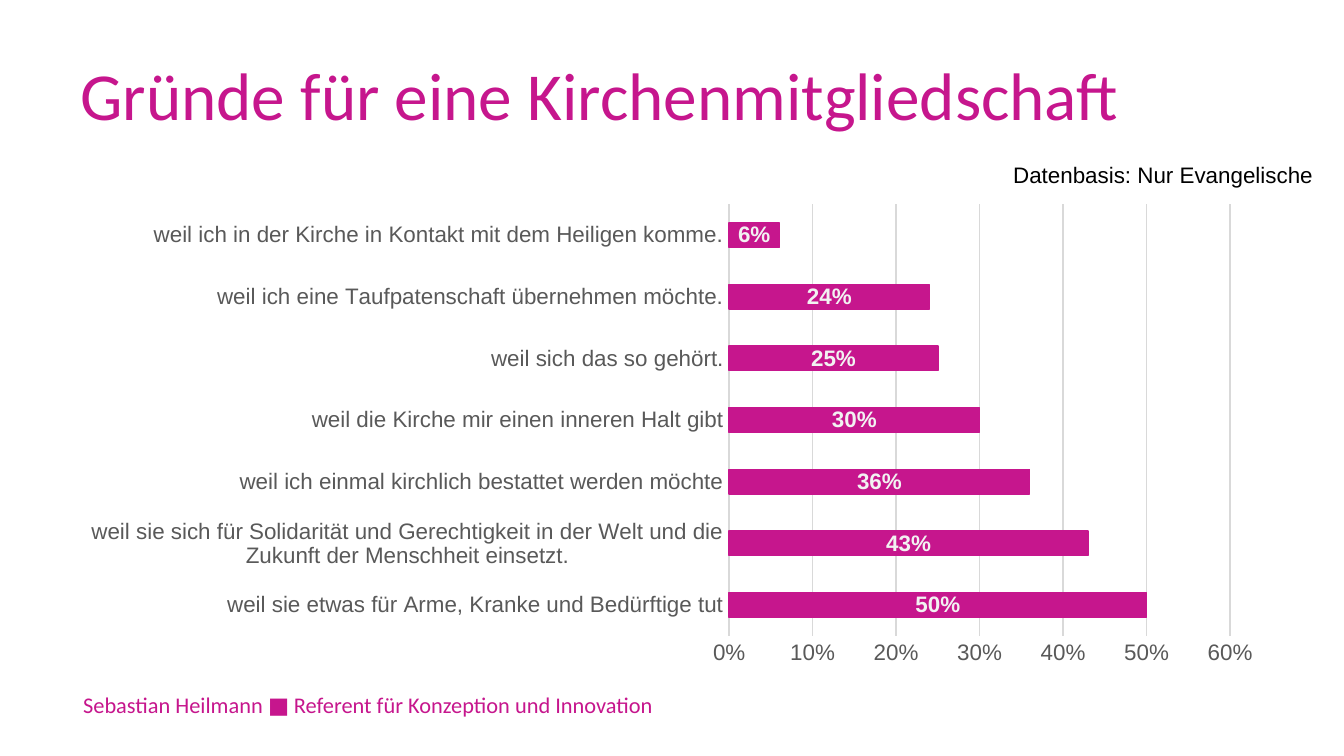
from pptx import Presentation
from pptx.chart.data import CategoryChartData
from pptx.dml.color import RGBColor
from pptx.enum.chart import XL_CHART_TYPE as ChartType
from pptx.enum.chart import XL_LABEL_POSITION as LabelPosition
from pptx.enum.chart import XL_TICK_MARK as TickMark
from pptx.enum.text import MSO_ANCHOR as Anchor
from pptx.util import Inches, Pt

MAGENTA, BLACK, GREY, LIGHT, RULE = "C6168D", "000000", "595959", "F2F2F2", "D9D9D9"

REASONS = {
    "weil sie etwas für Arme, Kranke und Bedürftige tut": 0.5,
    "weil sie sich für Solidarität und Gerechtigkeit in der Welt und die Zukunft der Menschheit einsetzt.": 0.43,
    "weil ich einmal kirchlich bestattet werden möchte": 0.36,
    "weil die Kirche mir einen inneren Halt gibt": 0.3,
    "weil sich das so gehört.": 0.25,
    "weil ich eine Taufpatenschaft übernehmen möchte.": 0.24,
    "weil ich in der Kirche in Kontakt mit dem Heiligen komme.": 0.06,
}


def color(hex_code):
    return RGBColor.from_string(hex_code)


class SlideBuilder:
    """Holds the style and the current slide and adds elements to it."""

    heading_font = "Calibri"
    body_font = "Arial"
    body_size = 12

    def __init__(self, slide):
        self.slide = slide

    def style_font(self, font, name, size, hex_code, bold=False):
        font.name, font.size, font.bold = name, Pt(size), bold
        font.color.rgb = color(hex_code)

    def style_line(self, line, hex_code):
        line.color.rgb = color(hex_code)
        line.width = Pt(0.75)

    def add_text(self, text, box, font_name, size, hex_code, anchor=Anchor.MIDDLE):
        frame = self.slide.shapes.add_textbox(*map(Inches, box)).text_frame
        frame.word_wrap = True
        frame.vertical_anchor = anchor
        frame.text = text
        self.style_font(frame.paragraphs[0].runs[0].font, font_name, size, hex_code)

    def style_axis(self, axis):
        axis.major_tick_mark = axis.minor_tick_mark = TickMark.NONE
        self.style_font(axis.tick_labels.font, self.body_font, self.body_size, GREY)

    def add_bar_chart(self, values, box):
        data = CategoryChartData(number_format="0%")
        data.categories = list(values)
        data.add_series("Series 1", list(values.values()))
        chart = self.slide.shapes.add_chart(
            ChartType.BAR_STACKED, *map(Inches, box), data
        ).chart
        chart.has_legend = chart.has_title = False
        self.style_font(chart.font, self.body_font, 10, BLACK)

        reasons, shares = chart.category_axis, chart.value_axis
        self.style_axis(reasons)
        self.style_line(reasons.format.line, RULE)
        self.style_axis(shares)
        shares.format.line.fill.background()
        shares.has_major_gridlines = True
        self.style_line(shares.major_gridlines.format.line, RULE)
        shares.tick_labels.number_format = "0%"
        shares.tick_labels.number_format_is_linked = False

        bars = chart.plots[0]
        bars.vary_by_categories = False
        bars.gap_width, bars.overlap = 150, 100
        series = bars.series[0]
        series.format.fill.solid()
        series.format.fill.fore_color.rgb = color(MAGENTA)
        self.style_line(series.format.line, MAGENTA)
        labels = series.data_labels
        labels.show_value = True
        labels.position = LabelPosition.CENTER
        labels.number_format, labels.number_format_is_linked = "0%", False
        self.style_font(labels.font, self.body_font, self.body_size, LIGHT, bold=True)


def main():
    deck = Presentation()
    deck.slide_width = Inches(10)
    deck.slide_height = deck.slide_width * 9 // 16
    builder = SlideBuilder(deck.slides.add_slide(deck.slide_layouts[6]))
    builder.add_text(
        "Sebastian Heilmann ■ Referent für Konzeption und Innovation",
        (0.52, 5.08, 5.11, 0.33), builder.heading_font, 12, MAGENTA,
    )
    builder.add_text(
        "Gründe für eine Kirchenmitgliedschaft",
        (0.5, 0.23, 9, 0.94), builder.heading_font, 36, MAGENTA,
    )
    builder.add_bar_chart(REASONS, (0.5, 1.45, 9, 3.57))
    builder.add_text(
        "Datenbasis: Nur Evangelische",
        (7.44, 1.15, 5.32, 0.3), builder.body_font, 12, BLACK, Anchor.TOP,
    )
    deck.save("out.pptx")


if __name__ == "__main__":
    main()
